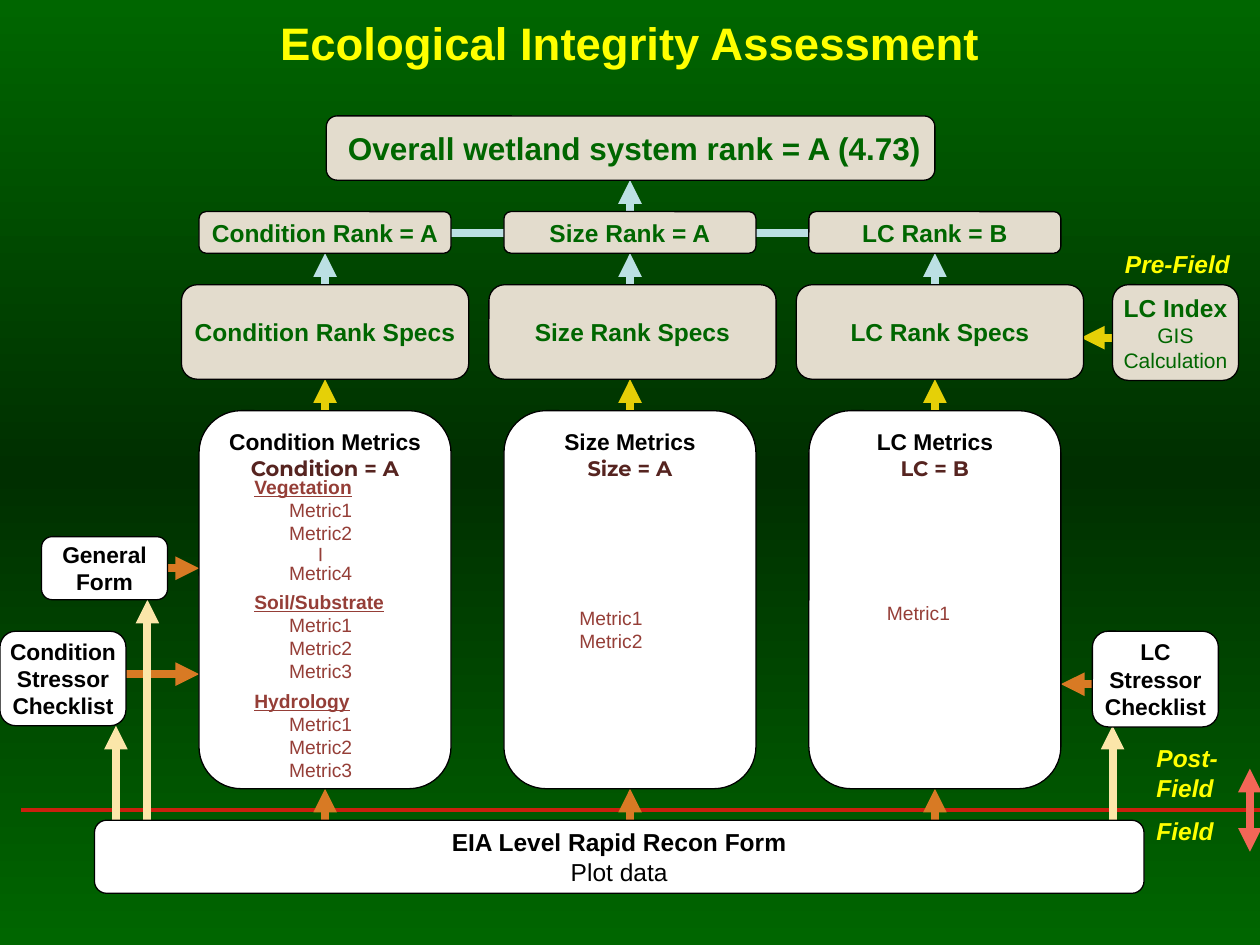
from copy import deepcopy
from dataclasses import dataclass, replace

from lxml.etree import SubElement
from pptx import Presentation
from pptx.dml.color import RGBColor
from pptx.enum.shapes import MSO_CONNECTOR, MSO_SHAPE
from pptx.enum.text import MSO_ANCHOR, PP_ALIGN
from pptx.oxml.ns import qn
from pptx.util import Inches, Pt


@dataclass(frozen=True)
class Style:
    size: int
    color: str
    bold: bool = True
    italic: bool = False
    underline: bool = False
    font: str = "Arial"
    align: PP_ALIGN = PP_ALIGN.CENTER
    before: float = 0


class Theme:
    edge_green, mid_green = "006600", "002F00"
    beige, white, black = "E3DCCD", "FFFFFF", "000000"
    blue, gold, orange, cream = "BBE0E3", "E5D007", "D87A24", "FBE6A9"
    red, coral = "CA200E", "F36657"
    title = Style(26, "FFFF00")
    phase = Style(14, "FFFF00", italic=True, align=PP_ALIGN.LEFT)
    overall = Style(18, "006600")
    rank = Style(14, "006600")
    rank_note = Style(12, "006600", bold=False)
    form = Style(14, "000000")
    form_note = Style(14, "000000", bold=False)
    box = Style(13, "000000")
    score = Style(12, "562420", font="Montserrat")
    metric = Style(11, "953E37", bold=False)
    metric_left = replace(metric, align=PP_ALIGN.LEFT)
    group = replace(metric_left, bold=True, underline=True)
    next_group = replace(group, before=3.5)
    gap_mark = Style(8, "953E37")


def rgb(value):
    return RGBColor.from_string(value)


def write(tf, lines):
    for i, (text, style) in enumerate(lines):
        p = tf.add_paragraph() if i else tf.paragraphs[0]
        p.text = text
        p.alignment = style.align
        p.space_before = Pt(style.before)
        font = p.runs[0].font
        font.name, font.size = style.font, Pt(style.size)
        font.bold, font.italic = style.bold, style.italic
        font.underline = style.underline
        font.color.rgb = rgb(style.color)


def add_background(s):
    fill = s.background.fill
    fill.gradient()
    fill.gradient_angle = 90
    stops = s.element.find(".//" + qn("a:gsLst"))
    stops.insert(1, deepcopy(stops[0]))
    colors = (Theme.edge_green, Theme.mid_green, Theme.edge_green)
    for stop, position, color in zip(fill.gradient_stops, (0, 0.5, 1), colors):
        stop.position = position
        stop.color.rgb = rgb(color)


def add_box(s, x, y, w, h, fill, lines, anchor=MSO_ANCHOR.MIDDLE, top=0):
    sp = s.shapes.add_shape(MSO_SHAPE.ROUNDED_RECTANGLE,
                            Inches(x), Inches(y), Inches(w), Inches(h))
    sp.shadow.inherit = False
    sp.fill.solid()
    sp.fill.fore_color.rgb = rgb(fill)
    sp.line.color.rgb = rgb(Theme.black)
    sp.line.width = Pt(0.75)
    tf = sp.text_frame
    tf.word_wrap = False
    tf.vertical_anchor = anchor
    tf.margin_left = tf.margin_right = tf.margin_bottom = 0
    tf.margin_top = Inches(top)
    write(tf, lines)
    return sp


def add_label(s, x, y, w, h, lines, anchor=MSO_ANCHOR.TOP):
    tf = s.shapes.add_textbox(Inches(x), Inches(y), Inches(w), Inches(h)).text_frame
    tf.word_wrap = True
    tf.vertical_anchor = anchor
    write(tf, lines)


def add_line(s, x1, y1, x2, y2, color, width=4.5, arrow=True):
    sp = s.shapes.add_connector(MSO_CONNECTOR.STRAIGHT,
                                Inches(x1), Inches(y1), Inches(x2), Inches(y2))
    sp.line.color.rgb = rgb(color)
    sp.line.width = Pt(width)
    if arrow:
        SubElement(sp.line._get_or_add_ln(), qn("a:tailEnd"), type="triangle")
    SubElement(sp._element.spPr, qn("a:effectLst"))


def add_column(s, index, name, grade):
    center = 5 + 2.42 * (index - 1)
    specs_center = 5.02 + 2.44 * (index - 1)
    for y1, y2, color in ((2.26, 2.01, Theme.blue), (3.26, 3.01, Theme.gold),
                          (6.51, 6.26, Theme.orange)):
        add_line(s, center, y1, center, y2, color)
    add_box(s, center - 1, 1.68, 2, 0.33, Theme.beige,
            [(f"{name} Rank = {grade}", Theme.rank)])
    add_box(s, specs_center - 1.14, 2.26, 2.28, 0.75, Theme.beige,
            [(f"{name} Rank Specs", Theme.rank)])
    add_box(s, center - 1, 3.26, 2, 3, Theme.white,
            [(f"{name} Metrics", Theme.box), (f"{name} = {grade}", Theme.score)],
            MSO_ANCHOR.TOP, 0.04)


def add_metric_lists(s):
    groups = (("Vegetation", ("Metric1", "Metric2", "|", "Metric4")),
              ("Soil/Substrate", ("Metric1", "Metric2", "Metric3")),
              ("Hydrology", ("Metric1", "Metric2", "Metric3")))
    lines = []
    for heading, metrics in groups:
        lines.append((heading, Theme.next_group if lines else Theme.group))
        lines += [(m, Theme.gap_mark if m == "|" else Theme.metric) for m in metrics]
    add_label(s, 1.92, 3.72, 1.25, 2.54, lines)
    add_label(s, 4.5, 4.76, 1, 0.47,
              [(m, Theme.metric_left) for m in ("Metric1", "Metric2")])
    add_label(s, 6.94, 4.72, 1, 0.29, [("Metric1", Theme.metric_left)])


def add_arrows(s):
    add_line(s, 0.17, 6.43, 10.17, 6.43, Theme.red, 2.25, arrow=False)
    add_line(s, 5, 1.68, 5, 1.43, Theme.blue)
    add_line(s, 3.41, 1.85, 6.91, 1.85, Theme.blue)
    add_line(s, 8.83, 2.68, 8.58, 2.68, Theme.gold)
    for x1, x2, y in ((1, 1.58, 5.35), (8.67, 8.42, 5.43), (1.33, 1.58, 4.51)):
        add_line(s, x1, y, x2, y, Theme.orange)
    for x, y in ((8.83, 5.76), (0.92, 5.76), (1.17, 4.76)):
        add_line(s, x, 6.51, x, y, Theme.cream)
    for y in (6.1, 6.76):
        add_line(s, 9.92, 6.43, 9.92, y, Theme.coral)


def add_inputs(s):
    for x, y, h, words in ((0.33, 4.26, 0.5, ("General", "Form")),
                           (0, 5.01, 0.75, ("Condition", "Stressor", "Checklist")),
                           (8.67, 5.01, 0.76, ("LC", "Stressor", "Checklist"))):
        add_box(s, x, y, 1, h, Theme.white, [(word, Theme.box) for word in words])
    add_box(s, 8.83, 2.26, 1, 0.76, Theme.beige,
            [("LC Index", Theme.rank), ("GIS", Theme.rank_note),
             ("Calculation", Theme.rank_note)])
    add_box(s, 0.75, 6.51, 8.33, 0.58, Theme.white,
            [("EIA Level Rapid Recon Form", Theme.form), ("Plot data", Theme.form_note)])


def main():
    prs = Presentation()
    prs.slide_width, prs.slide_height = Inches(10), Inches(7.5)
    s = prs.slides.add_slide(prs.slide_layouts[6])
    add_background(s)
    add_label(s, 0, 0, 10, 0.67, [("Ecological Integrity Assessment", Theme.title)],
              MSO_ANCHOR.MIDDLE)
    add_arrows(s)
    overall = add_box(s, 2.59, 0.92, 4.83, 0.51, Theme.beige,
                      [("Overall wetland system rank = A (4.73)", Theme.overall)])
    overall.text_frame.margin_left = Inches(0.06)
    for i, (name, grade) in enumerate((("Condition", "A"), ("Size", "A"), ("LC", "B"))):
        add_column(s, i, name, grade)
    add_metric_lists(s)
    add_inputs(s)
    for x, y, w, h, text in ((8.83, 1.93, 1.17, 0.33, "Pre-Field"),
                             (9.08, 5.85, 0.83, 0.57, "Post-Field"),
                             (9.08, 6.43, 0.83, 0.33, "Field")):
        add_label(s, x, y, w, h, [(text, Theme.phase)])
    prs.save("out.pptx")


if __name__ == "__main__":
    main()
